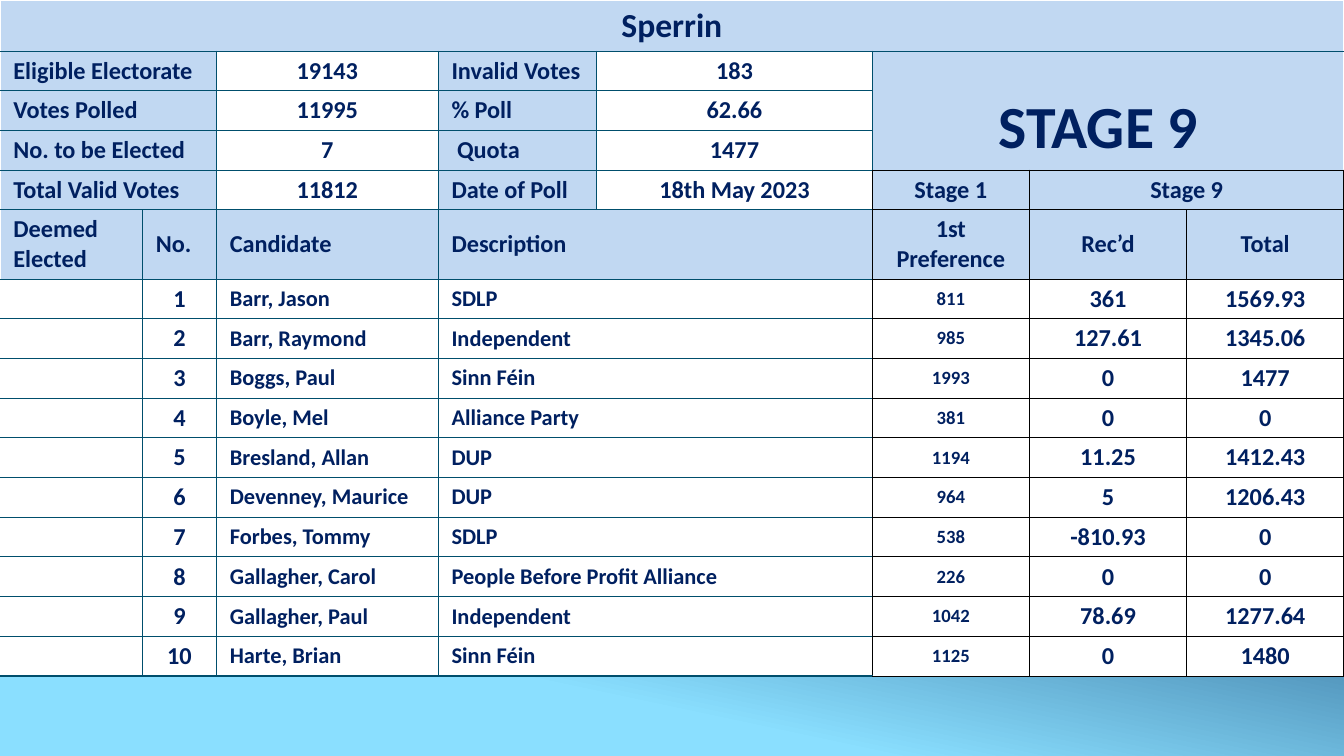
from lxml import etree
from pptx import Presentation
from pptx.dml.color import RGBColor
from pptx.enum.text import MSO_ANCHOR, PP_ALIGN
from pptx.oxml.ns import qn
from pptx.util import Inches, Pt

LEFT, CENTER = PP_ALIGN.LEFT, PP_ALIGN.CENTER
MIDDLE, BOTTOM = MSO_ANCHOR.MIDDLE, MSO_ANCHOR.BOTTOM

COLORS = {
    "text": "002060",
    "header": "C1D8F2",
    "white": "FFFFFF",
    "teal": "004E6C",
    "black": "000000",
    "sky_dark": "0D3868",
    "sky_light": "8ADFFF",
}
FONT = "Calibri"
BODY_SIZE, NAME_SIZE, VOTE_SIZE = 13, 12, 10
TITLE = "Sperrin"
BANNER = [("STAGE 9 ", 32), (" ", BODY_SIZE)]
SUMMARY = [
    ("Eligible Electorate", "19143", "Invalid Votes", "183"),
    ("Votes Polled", "11995", "% Poll", "62.66"),
    ("No. to be Elected", "7", " Quota", "1477"),
    ("Total Valid Votes", "11812", "Date of Poll", "18th May 2023"),
]
HEADINGS = ["Deemed Elected", "No.", "Candidate", "Description",
            "1st Preference", "Rec’d", "Total"]
CANDIDATES = [
    ("Barr, Jason", "SDLP", "811", "361", "1569.93"),
    ("Barr, Raymond", "Independent", "985", "127.61", "1345.06"),
    ("Boggs, Paul", "Sinn Féin", "1993", "0", "1477"),
    ("Boyle, Mel", "Alliance Party", "381", "0", "0"),
    ("Bresland, Allan", "DUP", "1194", "11.25", "1412.43"),
    ("Devenney, Maurice", "DUP", "964", "5", "1206.43"),
    ("Forbes, Tommy", "SDLP", "538", "-810.93", "0"),
    ("Gallagher, Carol", "People Before Profit Alliance", "226", "0", "0"),
    ("Gallagher, Paul", "Independent", "1042", "78.69", "1277.64"),
    ("Harte, Brian", "Sinn Féin", "1125", "0", "1480"),
]

COLUMN_WIDTHS = [1.06, 0.55, 1.65, 1.18, 2.05, 1.17, 1.17, 1.17]
STAGE_ROW = len(SUMMARY)
HEADING_ROW = STAGE_ROW + 1
ROW_HEIGHTS = [0.37] + [0.28] * len(SUMMARY) + [0.48] + [0.28] * len(CANDIDATES)
FIRST_STAGE_COLUMN = 5
LAST_COLUMN = len(COLUMN_WIDTHS) - 1
# First column and column span of each heading
FIELDS = [(0, 1), (1, 1), (2, 1), (3, 2), (5, 1), (6, 1), (7, 1)]
FIELD_SIZES = [BODY_SIZE, BODY_SIZE, NAME_SIZE, NAME_SIZE, VOTE_SIZE, BODY_SIZE, BODY_SIZE]
FIELD_ALIGNS = [LEFT, CENTER, LEFT, LEFT, CENTER, CENTER, CENTER]
HEADING_ALIGNS = [LEFT] * 4 + [CENTER] * 3


def cell_edges(row, first, last, rows):
    """Return the line colour and width of each side of a cell."""
    teal, white, black = ("teal", 0.75), ("white", 1), ("black", 0.5)
    if first >= FIRST_STAGE_COLUMN and row >= STAGE_ROW:
        return dict.fromkeys("LRTB", black)
    edges = dict.fromkeys("LRTB", teal)
    if first == 0:
        edges["L"] = white
    if last == LAST_COLUMN:
        edges["R"] = white
    if row == 0:
        edges["T"] = white
    if rows > 1:
        edges["B"] = black
    if last == FIRST_STAGE_COLUMN - 1 and row >= STAGE_ROW:
        edges["R"] = black
    return edges


def draw_edges(cell, edges):
    properties = cell._tc.get_or_add_tcPr()
    for side, (color, width) in edges.items():
        line = etree.SubElement(properties, qn(f"a:ln{side}"), w=str(Pt(width)))
        solid = etree.SubElement(line, qn("a:solidFill"))
        etree.SubElement(solid, qn("a:srgbClr"), val=COLORS[color])


def put(table, row, column, runs, fill, align=LEFT, span=(1, 1), anchor=MIDDLE):
    """Fill, outline and write one cell, merged over span (rows, columns)."""
    rows, columns = span
    edges = cell_edges(row, column, column + columns - 1, rows)
    for r in range(row, row + rows):
        for c in range(column, column + columns):
            part = table.cell(r, c)
            draw_edges(part, edges)
            part.fill.solid()
            part.fill.fore_color.rgb = RGBColor.from_string(COLORS[fill])
            part.margin_left = part.margin_right = Inches(0.1)
            part.margin_top = part.margin_bottom = Pt(2.7)
            part.vertical_anchor = anchor
    cell = table.cell(row, column)
    if span != (1, 1):
        cell.merge(table.cell(row + rows - 1, column + columns - 1))
    paragraph = cell.text_frame.paragraphs[0]
    paragraph.alignment = align
    for text, size in runs:
        run = paragraph.add_run()
        run.text = text
        run.font.name = FONT
        run.font.size = Pt(size)
        run.font.bold = True
        run.font.color.rgb = RGBColor.from_string(COLORS["text"])
    if not runs:
        # Keeps an empty cell from growing to the default text size
        etree.SubElement(paragraph._p, qn("a:endParaRPr"), sz=str(BODY_SIZE * 100))


def fill_table(table):
    put(table, 0, 0, [(TITLE, 18)], "header", CENTER, (1, LAST_COLUMN + 1))
    for row, (label, value, second_label, second_value) in enumerate(SUMMARY, 1):
        put(table, row, 0, [(label, BODY_SIZE)], "header", span=(1, 2))
        put(table, row, 2, [(value, BODY_SIZE)], "white", CENTER)
        put(table, row, 3, [(second_label, BODY_SIZE)], "header")
        put(table, row, 4, [(second_value, BODY_SIZE)], "white", CENTER)
    put(table, 1, FIRST_STAGE_COLUMN, BANNER, "header", CENTER, (3, 3), BOTTOM)
    put(table, STAGE_ROW, 5, [("Stage 1", BODY_SIZE)], "header", CENTER)
    put(table, STAGE_ROW, 6, [("Stage 9", BODY_SIZE)], "header", CENTER, (1, 2))

    for (column, columns), heading, align in zip(FIELDS, HEADINGS, HEADING_ALIGNS):
        put(table, HEADING_ROW, column, [(heading, BODY_SIZE)], "header", align, (1, columns))
    for number, candidate in enumerate(CANDIDATES, 1):
        values = ("", str(number), *candidate)
        for (column, columns), value, size, align in zip(FIELDS, values, FIELD_SIZES, FIELD_ALIGNS):
            runs = [(value, size)] if value else []
            put(table, HEADING_ROW + number, column, runs, "white", align, (1, columns))


def paint_background(slide):
    fill = slide.background.fill
    fill.gradient()
    fill.gradient_angle = 258
    for stop, position, color in zip(fill.gradient_stops, (0.42, 0.82), ("sky_dark", "sky_light")):
        stop.position = position
        stop.color.rgb = RGBColor.from_string(COLORS[color])


def main():
    presentation = Presentation()
    presentation.slide_width = Inches(10)
    presentation.slide_height = Inches(10) * 9 // 16
    slide = presentation.slides.add_slide(presentation.slide_layouts[6])
    paint_background(slide)

    frame = slide.shapes.add_table(len(ROW_HEIGHTS), len(COLUMN_WIDTHS),
                                   0, 0, Inches(10), Inches(4.97))
    table = frame.table
    table.first_row = table.horz_banding = False
    for column, width in zip(table.columns, COLUMN_WIDTHS):
        column.width = Inches(width)
    for row, height in zip(table.rows, ROW_HEIGHTS):
        row.height = Inches(height)
    frame.height = Inches(4.97)
    fill_table(table)
    presentation.save("out.pptx")


if __name__ == "__main__":
    main()
